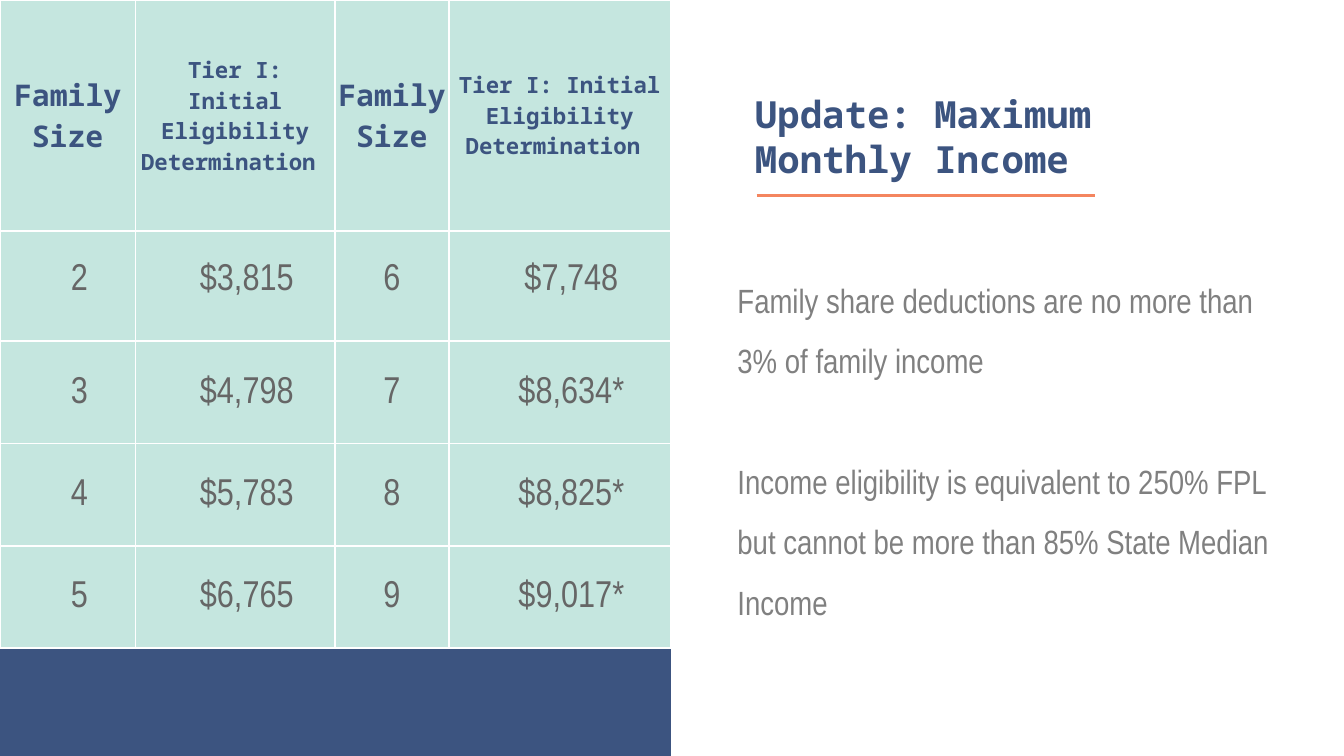
"""Build the maximum monthly income slide with its family size table."""
from lxml import etree
from pptx import Presentation
from pptx.dml.color import RGBColor
from pptx.enum.shapes import MSO_CONNECTOR, MSO_SHAPE
from pptx.enum.text import MSO_ANCHOR, PP_ALIGN
from pptx.oxml.ns import qn
from pptx.util import Pt

RECTANGLE = MSO_SHAPE.RECTANGLE
STRAIGHT = MSO_CONNECTOR.STRAIGHT
CENTER = PP_ALIGN.CENTER
MIDDLE, TOP = MSO_ANCHOR.MIDDLE, MSO_ANCHOR.TOP

COLORS = {"navy": "3C5480", "mint": "C5E6DF", "orange": "F4855F",
          "gray": "808080", "dark": "666666", "white": "FFFFFF"}
HEAD_FONT, BODY_FONT = "Noto Sans Mono", "Arial Narrow"

TITLE = "Update: Maximum Monthly Income"
NOTES = [
    "Family share deductions are no more than 3% of family income",
    "Income eligibility is equivalent to 250% FPL but cannot be more than 85% State Median Income",
]
TIER = "Tier I: Initial Eligibility Determination "
HEADERS = [("Family Size", 16), (TIER, 12)] * 2
INCOMES = [
    ("2", "$3,815", "6", "$7,748"),
    ("3", "$4,798", "7", "$8,634*"),
    ("4", "$5,783", "8", "$8,825*"),
    ("5", "$6,765", "9", "$9,017*"),
]
COLUMN_WIDTHS = [72.5, 107, 61, 118.8]
ROW_HEIGHTS = [123.8, 59, 54.8, 54.8, 54.8]
TOP_INSETS = [0, 17.2, 18.7, 18.7, 18.7]
INDENTS = [12.5, 12.5, 0, 12.5]


def color(name):
    return RGBColor.from_string(COLORS[name])


def write(para, text, font, size, shade, bold=False):
    para.text = text
    for span in para.runs:
        span.font.name, span.font.size, span.font.bold = font, Pt(size), bold
        span.font.color.rgb = color(shade)


def add_text(page, left, top, width, height):
    box = page.shapes.add_textbox(Pt(left), Pt(top), Pt(width), Pt(height))
    box.text_frame.word_wrap = True
    return box.text_frame


def add_borders(cell):
    properties = cell._tc.get_or_add_tcPr()
    for index, side in enumerate(("lnL", "lnR", "lnT", "lnB")):
        border = etree.Element(qn(f"a:{side}"), w=str(Pt(1)))
        fill = etree.SubElement(border, qn("a:solidFill"))
        etree.SubElement(fill, qn("a:srgbClr"), val=COLORS["white"])
        properties.insert(index, border)


def add_income_table(page):
    rows = [[text for text, _ in HEADERS], *INCOMES]
    frame = page.shapes.add_table(len(rows), len(HEADERS), 0, 0,
                                  Pt(sum(COLUMN_WIDTHS)), Pt(sum(ROW_HEIGHTS)))
    table = frame.table
    for column, width in zip(table.columns, COLUMN_WIDTHS):
        column.width = Pt(width)
    for row, height in zip(table.rows, ROW_HEIGHTS):
        row.height = Pt(height)
    for row_index, texts in enumerate(rows):
        for column_index, text in enumerate(texts):
            cell = table.cell(row_index, column_index)
            cell.margin_left = cell.margin_right = cell.margin_bottom = 0
            cell.margin_top = Pt(TOP_INSETS[row_index])
            cell.fill.solid()
            cell.fill.fore_color.rgb = color("mint")
            add_borders(cell)
            para = cell.text_frame.paragraphs[0]
            para.alignment = CENTER
            if row_index == 0:
                cell.vertical_anchor = MIDDLE
                write(para, text, HEAD_FONT, HEADERS[column_index][1], "navy", True)
            else:
                cell.vertical_anchor = TOP
                write(para, text, BODY_FONT, 20, "dark")
                para._p.get_or_add_pPr().set("marL", str(Pt(INDENTS[column_index])))


def main():
    deck = Presentation()
    deck.slide_width, deck.slide_height = Pt(720), Pt(405)
    page = deck.slides.add_slide(deck.slide_layouts[6])

    notes = add_text(page, 388, 135.4, 299, 199.4)
    for index, text in enumerate(NOTES):
        para = notes.add_paragraph() if index else notes.paragraphs[0]
        write(para, text, BODY_FONT, 18, "gray")
        para.line_spacing = 1.5
        para.space_before = Pt(32.3 * index)

    panel = page.shapes.add_shape(RECTANGLE, Pt(-0.5), 0, Pt(360), Pt(405))
    panel.shadow.inherit = False
    panel.fill.solid()
    panel.fill.fore_color.rgb = color("navy")
    panel.line.fill.background()

    title = add_text(page, 397.4, 45.4, 280, 55.4)
    write(title.paragraphs[0], TITLE, HEAD_FONT, 20, "navy", True)

    rule = page.shapes.add_connector(STRAIGHT, Pt(405.4), Pt(104.6), Pt(586.4), Pt(104.6))
    rule.line.color.rgb = color("orange")
    rule.line.width = Pt(1.75)
    etree.SubElement(rule._element.spPr, qn("a:effectLst"))

    add_income_table(page)
    deck.save("out.pptx")


if __name__ == "__main__":
    main()
